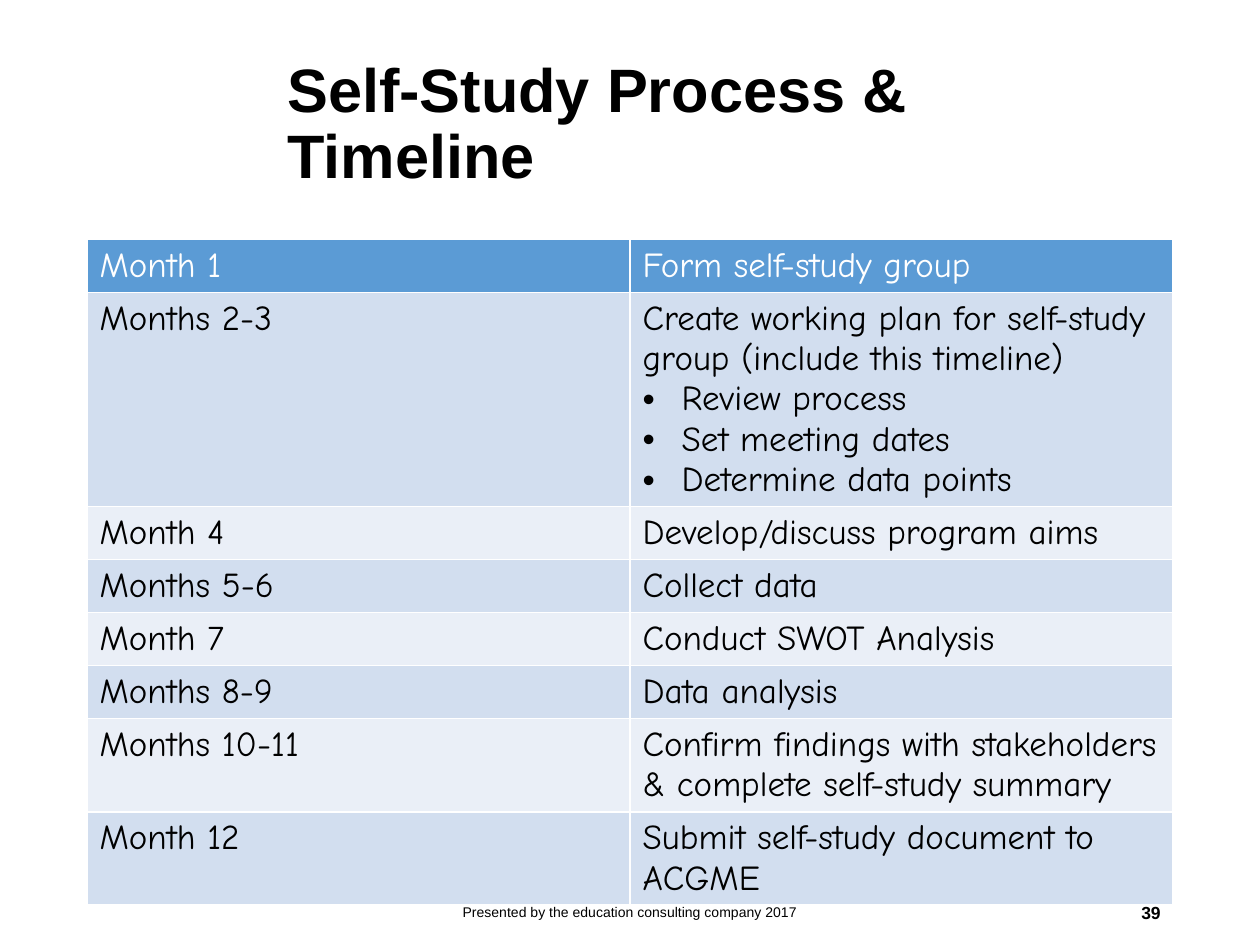
import pptx
import pptx.dml.color
import pptx.enum.text
import pptx.oxml
import pptx.oxml.ns
import pptx.util

Inches = pptx.util.Inches
ALIGN = pptx.enum.text.PP_ALIGN
MIDDLE = pptx.enum.text.MSO_ANCHOR.MIDDLE

BLACK, WHITE, HEADER_BLUE = "000000", "FFFFFF", "5B9BD5"
BANDS = ("D2DEEF", "EAEFF7")
BULLET_INDENT = Inches(0.31)

TITLE_BOX = (2.18, 0.27, 7.14, 1.45)
TABLE_BOX = (0.69, 1.9, 8.62, 3.28)
FOOTER_BOX = (0.69, 7.04, 8.62, 0.4)

TITLE_FORMAT = {"name": "Arial", "size": 35, "color": BLACK, "bold": True}
FOOTER_FORMAT = {"name": "Arial", "size": 8, "color": BLACK, "bold": False}
NUMBER_FORMAT = {"name": "Arial", "size": 10, "color": BLACK, "bold": True}
CELL_FORMAT = {"name": "Comic Neue", "size": 20, "color": BLACK, "bold": False}
HEADER_FORMAT = {**CELL_FORMAT, "color": WHITE}

# Each row: period, task, bulleted steps of the task
TIMELINE = [
    ("Month 1", "Form self-study group", []),
    ("Months 2-3", "Create working plan for self-study group (include this timeline)",
     ["Review process", "Set meeting dates", "Determine data points"]),
    ("Month 4", "Develop/discuss program aims", []),
    ("Months 5-6", "Collect data", []),
    ("Month 7", "Conduct SWOT Analysis", []),
    ("Months 8-9", "Data analysis", []),
    ("Months 10-11", "Confirm findings with stakeholders & complete self-study summary", []),
    ("Month 12", "Submit self-study document to ACGME", []),
]


def rgb(color):
    return pptx.dml.color.RGBColor.from_string(color)


def format_font(font, values):
    for key, value in values.items():
        if key == "color":
            font.color.rgb = rgb(value)
        else:
            setattr(font, key, pptx.util.Pt(value) if key == "size" else value)


def write_paragraph(paragraph, text, values, alignment=ALIGN.LEFT):
    paragraph.alignment = alignment
    run = paragraph.add_run()
    run.text = text
    format_font(run.font, values)


def add_bullet(paragraph):
    properties = paragraph._p.get_or_add_pPr()
    properties.set("marL", str(BULLET_INDENT))
    properties.set("indent", str(-BULLET_INDENT))
    namespace = pptx.oxml.ns.nsdecls("a")
    for xml in (f'<a:buFont {namespace} typeface="Arial"/>', f'<a:buChar {namespace} char="•"/>'):
        properties.append(pptx.oxml.parse_xml(xml))


def set_borders(cell, color, points):
    properties = cell._tc.get_or_add_tcPr()
    for side in "LRTB":
        properties.append(pptx.oxml.parse_xml(
            f'<a:ln{side} {pptx.oxml.ns.nsdecls("a")} w="{pptx.util.Pt(points)}">'
            f'<a:solidFill><a:srgbClr val="{color}"/></a:solidFill></a:ln{side}>'))


def place_title(slide, box):
    title = slide.shapes.title
    title.left, title.top, title.width, title.height = map(Inches, box)
    frame = title.text_frame
    frame.word_wrap = True
    frame.auto_size = pptx.enum.text.MSO_AUTO_SIZE.NONE
    frame.vertical_anchor = MIDDLE
    paragraph = frame.paragraphs[0]
    paragraph.line_spacing = 0.9
    write_paragraph(paragraph, "Self-Study Process & Timeline", TITLE_FORMAT)


def fill_cell(cell, text, steps, values, fill):
    set_borders(cell, WHITE, 1)
    cell.fill.solid()
    cell.fill.fore_color.rgb = rgb(fill)
    write_paragraph(cell.text_frame.paragraphs[0], text, values)
    for step in steps:
        paragraph = cell.text_frame.add_paragraph()
        add_bullet(paragraph)
        write_paragraph(paragraph, step, values)


def add_timeline(slide, box):
    table = slide.shapes.add_table(len(TIMELINE), 2, *map(Inches, box)).table
    for row, (period, task, steps) in enumerate(TIMELINE):
        fill = BANDS[(row - 1) % 2] if row else HEADER_BLUE
        values = CELL_FORMAT if row else HEADER_FORMAT
        fill_cell(table.cell(row, 0), period, [], values, fill)
        fill_cell(table.cell(row, 1), task, steps, values, fill)


def add_label(slide, box, text, values, alignment):
    frame = slide.shapes.add_textbox(*map(Inches, box)).text_frame
    frame.word_wrap = True
    frame.vertical_anchor = MIDDLE
    write_paragraph(frame.paragraphs[0], text, values, alignment)


def add_footer(slide, box):
    """Centre the presenter line in the box and set the page number at its right."""
    left, top, width, height = box
    label_width, number_width = 3.38, 2.25
    add_label(slide, (left + (width - label_width) / 2, top, label_width, height),
              "Presented by the education consulting company 2017", FOOTER_FORMAT, ALIGN.CENTER)
    add_label(slide, (left + width - number_width, top, number_width, height),
              "39", NUMBER_FORMAT, ALIGN.RIGHT)


def main():
    presentation = pptx.Presentation()
    presentation.slide_width, presentation.slide_height = Inches(10), Inches(7.5)
    slide = presentation.slides.add_slide(presentation.slide_layouts.get_by_name("Title Only"))
    place_title(slide, TITLE_BOX)
    add_timeline(slide, TABLE_BOX)
    add_footer(slide, FOOTER_BOX)
    presentation.save("out.pptx")


if __name__ == "__main__":
    main()
